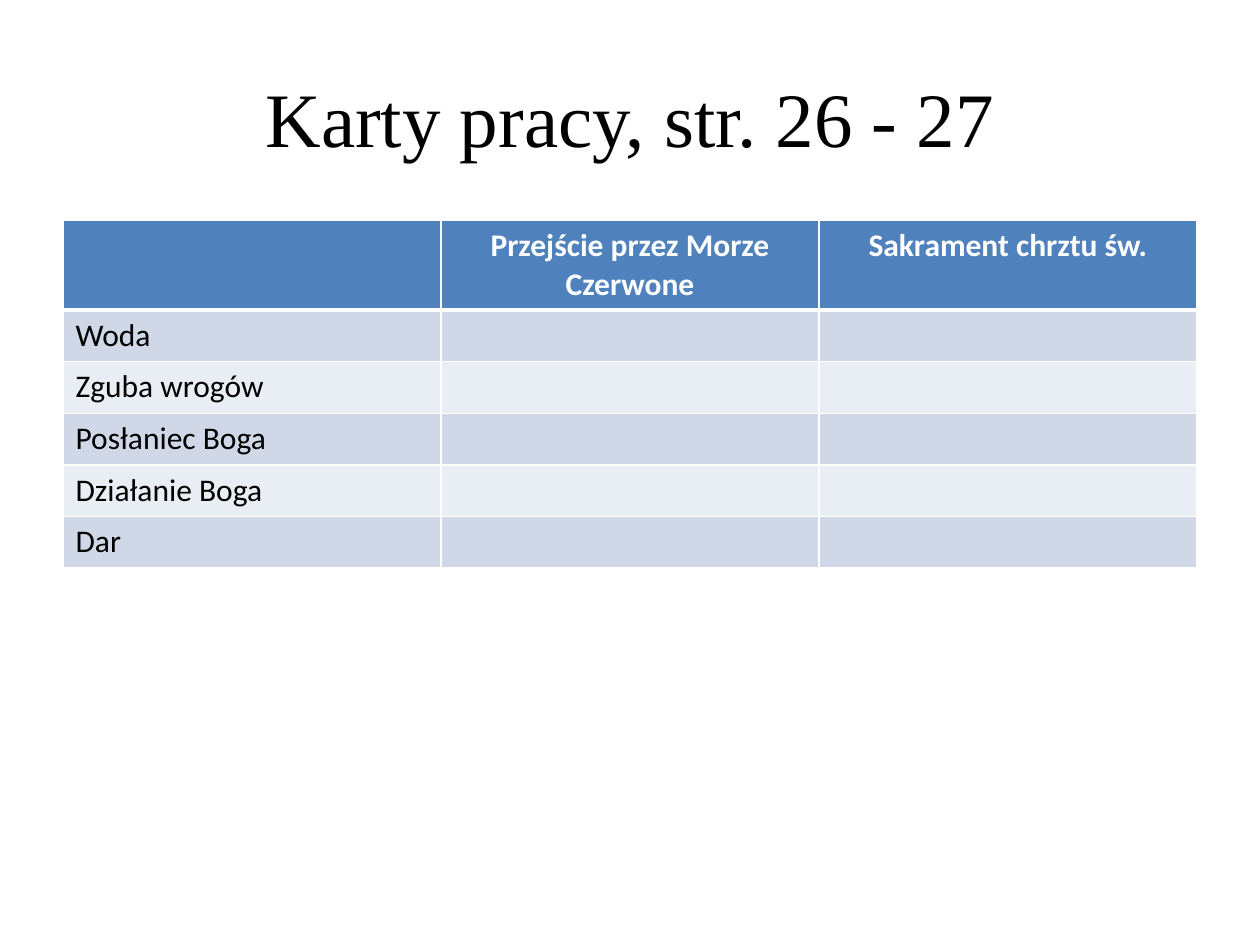
from dataclasses import dataclass

from lxml.etree import SubElement
from pptx import Presentation
from pptx.dml.color import RGBColor
from pptx.enum.text import MSO_ANCHOR, PP_ALIGN
from pptx.oxml.ns import qn
from pptx.table import _Cell
from pptx.text.text import _Paragraph
from pptx.util import Inches, Pt

BLACK = RGBColor(0x00, 0x00, 0x00)
WHITE = RGBColor(0xFF, 0xFF, 0xFF)
BLUE = RGBColor(0x4F, 0x81, 0xBD)
DARK = RGBColor(0xD0, 0xD8, 0xE8)
LIGHT = RGBColor(0xE9, 0xED, 0xF4)

HEADS = ("", "Przejście przez Morze Czerwone", "Sakrament chrztu św.")
TOPICS = ("Woda", "Zguba wrogów", "Posłaniec Boga", "Działanie Boga", "Dar")


@dataclass
class Row:
    texts: tuple[str, ...]
    fill: RGBColor
    color: RGBColor = BLACK
    bold: bool = False
    align: PP_ALIGN = PP_ALIGN.LEFT
    top: int = 1
    bottom: int = 1


def set_font(par: _Paragraph, name: str, size: int, color: RGBColor, bold: bool) -> None:
    font = par.font
    font.name, font.size, font.bold = name, Pt(size), bold
    font.color.rgb = color


def add_edges(cell: _Cell, top: int, bottom: int) -> None:
    props = cell._tc.get_or_add_tcPr()
    for side, width in (("L", 1), ("R", 1), ("T", top), ("B", bottom)):
        line = SubElement(props, qn(f"a:ln{side}"), w=str(Pt(width)))
        fill = SubElement(line, qn("a:solidFill"))
        SubElement(fill, qn("a:srgbClr"), val=str(WHITE))


def fill_cell(cell: _Cell, text: str, row: Row) -> None:
    add_edges(cell, row.top, row.bottom)
    cell.fill.solid()
    cell.fill.fore_color.rgb = row.fill
    cell.text = text
    par = cell.text_frame.paragraphs[0]
    par.alignment = row.align
    set_font(par, "Calibri", 18, row.color, row.bold)


def main() -> None:
    deck = Presentation()
    deck.slide_width, deck.slide_height = Inches(10), Inches(7.5)
    slide = deck.slides.add_slide(deck.slide_layouts[5])

    # Title
    title = slide.shapes.title
    title.left, title.top = Inches(0.5), Inches(0.3)
    title.width, title.height = Inches(9), Inches(1.25)
    frame = title.text_frame
    frame.text = "Karty pracy, str. 26 - 27"
    frame.vertical_anchor = MSO_ANCHOR.MIDDLE
    par = frame.paragraphs[0]
    par.alignment = PP_ALIGN.CENTER
    set_font(par, "Times New Roman", 44, BLACK, False)

    # Header row, then banded topic rows with a thick rule between them
    rows = [Row(HEADS, BLUE, WHITE, True, PP_ALIGN.CENTER, bottom=3)]
    for i, topic in enumerate(TOPICS):
        fill = LIGHT if i % 2 else DARK
        rows.append(Row((topic, "", ""), fill, top=1 if i else 3))

    # Table
    high = Inches(0.41)
    table = slide.shapes.add_table(
        len(rows), len(HEADS), Inches(0.5), Inches(1.75), Inches(9), high * len(rows)
    ).table
    for line, row in zip(table.rows, rows):
        line.height = high
        for cell, text in zip(line.cells, row.texts):
            fill_cell(cell, text, row)

    deck.save("out.pptx")


if __name__ == "__main__":
    main()
